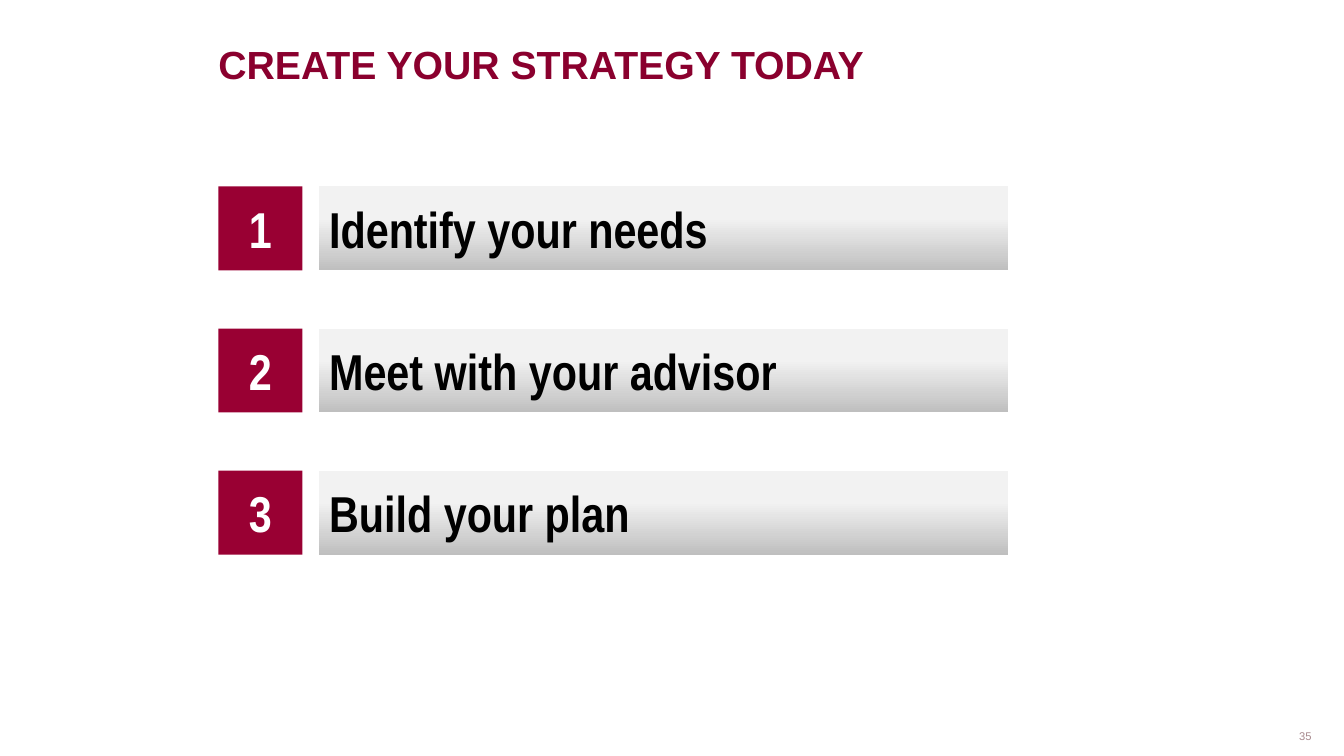
from pptx import Presentation
from pptx.dml.color import RGBColor
from pptx.enum.shapes import MSO_SHAPE
from pptx.enum.text import MSO_ANCHOR, PP_ALIGN
from pptx.util import Inches, Pt

RECT = MSO_SHAPE.RECTANGLE
TOP, MIDDLE = MSO_ANCHOR.TOP, MSO_ANCHOR.MIDDLE
LEFT, CENTER, RIGHT = PP_ALIGN.LEFT, PP_ALIGN.CENTER, PP_ALIGN.RIGHT

COLORS = {
    "title": "8A002E",
    "number": "990033",
    "bar_dark": "BFBFBF",
    "bar_light": "F2F2F2",
    "white": "FFFFFF",
    "black": "000000",
    "page": "A7898D",
}

SLIDE_W, SLIDE_H = 13.33, 7.5
COL = SLIDE_W / 80
NUMBER_COL, BAR_COL, BAR_COLS = 13, 19, 41
SIDE = 5 * COL
FIRST_ROW, ROW_PITCH = 1.85, 1.41

STEPS = ["Identify your needs", "Meet with your advisor", "Build your plan"]


def rgb(name):
    return RGBColor.from_string(COLORS[name])


def write(sp, text, size, color, font="Arial", bold=True, align=LEFT, anchor=MIDDLE):
    tf = sp.text_frame
    tf.word_wrap = True
    tf.vertical_anchor = anchor
    p = tf.paragraphs[0]
    p.alignment = align
    r = p.add_run()
    r.text = text
    r.font.size = Pt(size)
    r.font.name = font
    r.font.bold = bold
    r.font.color.rgb = rgb(color)
    return p


def add_text_box(s, left, top, width, height):
    return s.shapes.add_textbox(*map(Inches, (left, top, width, height)))


def add_block(s, col, top, cols):
    sp = s.shapes.add_shape(
        RECT, *map(Inches, (col * COL, top, cols * COL, SIDE)))
    sp.shadow.inherit = False
    sp.line.fill.background()
    return sp


def fill_gradient(sp):
    """Fade from dark at the bottom to light above the middle."""
    sp.fill.gradient()
    sp.fill.gradient_angle = 90
    stops = zip(sp.fill.gradient_stops, (0, 0.63), ("bar_dark", "bar_light"))
    for stop, position, color in stops:
        stop.position = position
        stop.color.rgb = rgb(color)


def add_step(s, number, text):
    top = FIRST_ROW + (number - 1) * ROW_PITCH
    square = add_block(s, NUMBER_COL, top, 5)
    square.fill.solid()
    square.fill.fore_color.rgb = rgb("number")
    write(square, str(number), 36, "white", "Arial Narrow", align=CENTER)

    bar = add_block(s, BAR_COL, top, BAR_COLS)
    fill_gradient(bar)
    write(bar, text, 36, "black", "Arial Narrow")


def add_title(s, text):
    sp = add_text_box(s, NUMBER_COL * COL, 0.42, SLIDE_W * 2 / 3, SLIDE_H / 10)
    sp.text_frame.margin_left = 0
    p = write(sp, text, 28, "title", anchor=TOP)
    p.line_spacing = 0.85
    p.space_after = Pt(5)


def add_page_number(s, number):
    sp = add_text_box(s, SLIDE_W * 0.75, SLIDE_H - 0.4, 3.11, 0.4)
    write(sp, str(number), 8, "page", bold=False, align=RIGHT)


def main():
    prs = Presentation()
    prs.slide_width, prs.slide_height = Inches(SLIDE_W), Inches(SLIDE_H)
    s = prs.slides.add_slide(prs.slide_layouts[6])
    add_title(s, "CREATE YOUR STRATEGY TODAY")
    add_page_number(s, 35)
    for number, text in enumerate(STEPS, 1):
        add_step(s, number, text)
    prs.save("out.pptx")


if __name__ == "__main__":
    main()
